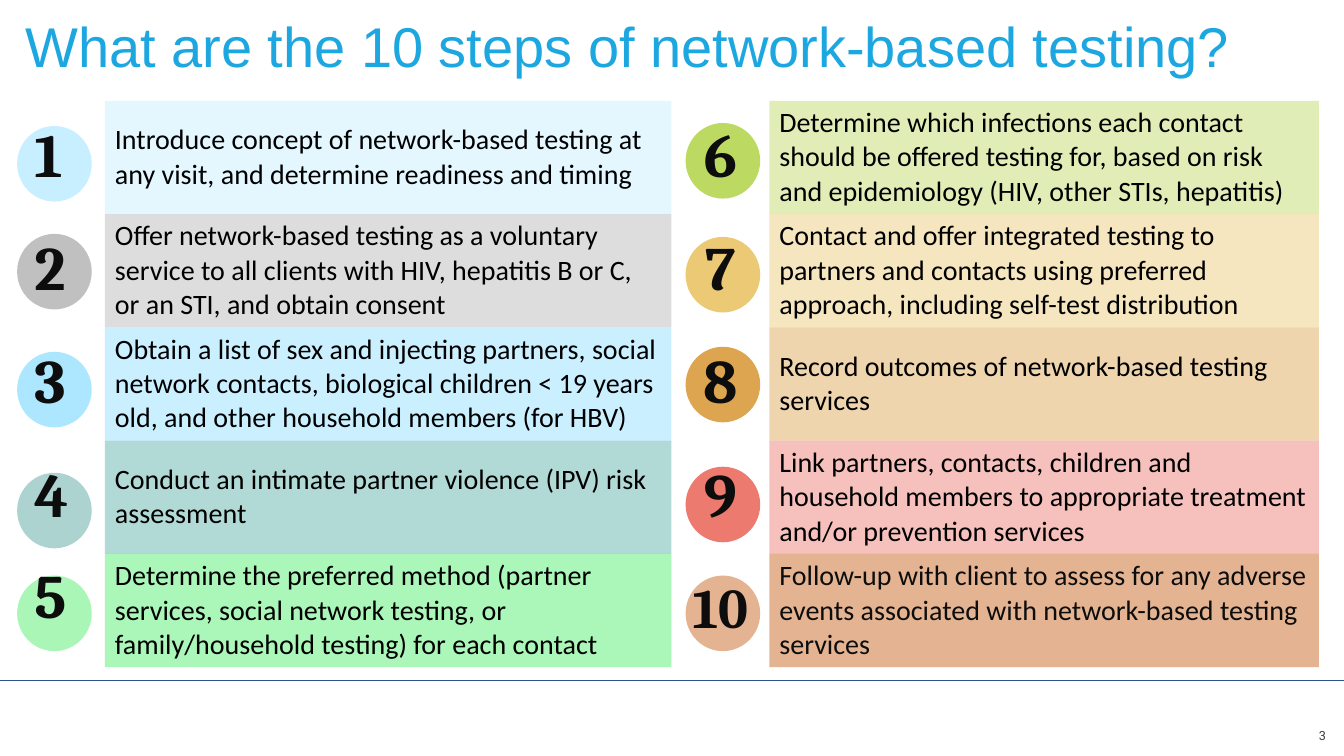
from lxml import etree
from pptx import Presentation
from pptx.dml.color import RGBColor
from pptx.enum import shapes, text
from pptx.oxml.ns import qn
from pptx.util import Inches, Pt

TITLE = "What are the 10 steps of network-based testing?"
PAGE = "3"
COLORS = {"title": "1DA7E0", "number": "0D0D0D", "body": "000000",
          "page": "3D3D3D", "rule": "2F528F"}
# step text, cell colour, circle colour, circle top
LEFT = [
    ("Introduce concept of network-based testing at any visit, and determine "
     "readiness and timing", "C5EEFF", "8CDDFF", 1.25),
    ("Offer network-based testing as a voluntary service to all clients with HIV, "
     "hepatitis B or C, or an STI, and obtain consent", "B6B6B6", "7A7A7A", 2.32),
    ("Obtain a list of sex and injecting partners, social network contacts, biological "
     "children < 19 years old, and other household members (for HBV)",
     "8CDDFF", "52CCFF", 3.49),
    ("Conduct an intimate partner violence (IPV) risk assessment",
     "56AEA6", "4FA39B", 4.69),
    ("Determine the preferred method (partner services, social network testing, or "
     "family/household testing) for each contact", "49ED68", "49ED68", 5.71),
]
RIGHT = [
    ("Determine which infections each contact should be offered testing for, based on "
     "risk and epidemiology (HIV, other STIs, hepatitis)", "BCD961", "BCD961", 1.22),
    ("Contact and offer integrated testing to partners and contacts using preferred "
     "approach, including self-test distribution", "EBC975", "EBC975", 2.35),
    ("Record outcomes of network-based testing services", "DEA550", "DEA550", 3.44),
    ("Link partners, contacts, children and household members to appropriate treatment "
     "and/or prevention services", "EC7A6E", "EC7A6E", 4.63),
    ("Follow-up with client to assess for any adverse events associated with "
     "network-based testing services", "C55A11", "E4B392", 5.71),
]
SIDES = [(LEFT, 0.17, 47, text.PP_ALIGN.LEFT), (RIGHT, 6.8, 100, text.PP_ALIGN.CENTER)]
COLUMNS = [0.8, 5.62, 0.97, 5.45]
TABLE_BOX = (0.24, 1, 12.85, 5.62)
CIRCLE = (0.74, 0.75)
CELL_ALPHA = 46
NO_STYLE = "{2D5ABB26-0587-4C30-8999-92F81FD0307C}"


def write(tf, words, size, font, color, bold=False, align=text.PP_ALIGN.LEFT):
    """Put one formatted paragraph in a text frame."""
    tf.word_wrap = True
    p = tf.paragraphs[0]
    p.alignment = align
    r = p.add_run()
    r.text = words
    r.font.size, r.font.name, r.font.bold = Pt(size), font, bold
    r.font.color.rgb = RGBColor.from_string(color)
    return p


def paint(fill, parent, color, alpha):
    """Fill a shape or cell with a colour of the given opacity in percent."""
    fill.solid()
    fill.fore_color.rgb = RGBColor.from_string(color)
    if alpha < 100:
        clr = parent.find(qn("a:solidFill")).find(qn("a:srgbClr"))
        etree.SubElement(clr, qn("a:alpha"), val=str(alpha * 1000))


def add_frame(s):
    """Add the title, the rule at the foot and the page number."""
    sp = s.shapes.add_textbox(*map(Inches, (12.61, 7.1, 0.64, 0.4)))
    sp.text_frame.vertical_anchor = text.MSO_ANCHOR.MIDDLE
    write(sp.text_frame, PAGE, 9, "Roboto", COLORS["page"], align=text.PP_ALIGN.RIGHT)

    rule = s.shapes.add_connector(shapes.MSO_CONNECTOR.STRAIGHT, 0, Inches(6.75),
                                  Inches(13.33), Inches(6.75))
    rule.line.color.rgb = RGBColor.from_string(COLORS["rule"])
    rule.line.width = Pt(0.5)
    etree.SubElement(rule._element.spPr, qn("a:effectLst"))

    tf = s.shapes.add_textbox(*map(Inches, (0.25, 0.11, 12.79, 0.67))).text_frame
    tf.margin_left = tf.margin_right = tf.margin_top = tf.margin_bottom = 0
    write(tf, TITLE, 40, "Arial", COLORS["title"]).space_after = Pt(6)


def add_circles(s):
    """Add the circles behind the step numbers."""
    for steps, left, alpha, _ in SIDES:
        for _, _, color, top in steps:
            sp = s.shapes.add_shape(shapes.MSO_SHAPE.OVAL,
                                    *map(Inches, (left, top, *CIRCLE)))
            sp.shadow.inherit = False
            sp.line.fill.background()
            paint(sp.fill, sp._element.spPr, color, alpha)


def add_steps(s):
    """Add the table of numbered steps."""
    rows = len(LEFT)
    tbl = s.shapes.add_table(rows, len(COLUMNS), *map(Inches, TABLE_BOX)).table
    tbl.first_row = tbl.horz_banding = False
    tbl._tbl.tblPr.find(qn("a:tableStyleId")).text = NO_STYLE
    for col, width in zip(tbl.columns, COLUMNS):
        col.width = Inches(width)

    for side, (steps, _, _, align) in enumerate(SIDES):
        for row, (words, color, _, _) in enumerate(steps):
            number = side * rows + row + 1
            num, body = tbl.cell(row, side * 2), tbl.cell(row, side * 2 + 1)
            num.vertical_anchor = body.vertical_anchor = text.MSO_ANCHOR.MIDDLE
            num.fill.background()
            paint(body.fill, body._tc.tcPr, color, CELL_ALPHA)
            write(num.text_frame, str(number), 40 if number == 10 else 44, "Cambria",
                  COLORS["number"], bold=True, align=align)
            write(body.text_frame, words, 20, "Calibri",
                  COLORS["number" if number == 10 else "body"])
    tbl.cell(rows - 1, 0).margin_bottom = Inches(0.29)


def main():
    """Build and save the slide."""
    prs = Presentation()
    prs.slide_width, prs.slide_height = Inches(13.33), Inches(7.5)
    s = prs.slides.add_slide(prs.slide_layouts[6])
    add_frame(s)
    add_circles(s)
    add_steps(s)
    prs.save("out.pptx")


if __name__ == "__main__":
    main()
